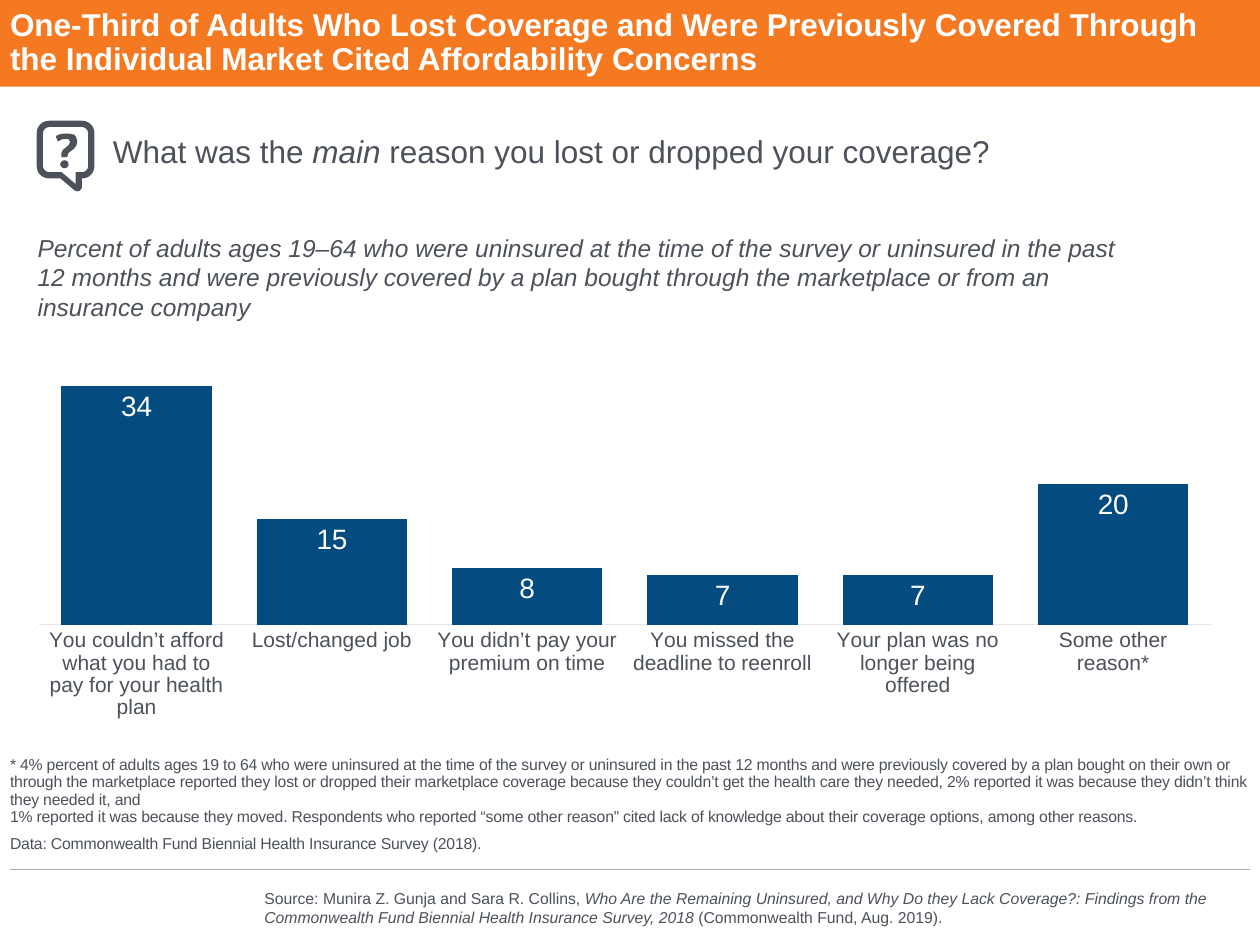
from math import cos, radians, sin

from lxml.etree import SubElement
from pptx import Presentation
from pptx.chart.data import CategoryChartData
from pptx.dml.color import RGBColor
from pptx.enum.chart import XL_CHART_TYPE, XL_LABEL_POSITION, XL_TICK_MARK
from pptx.enum.shapes import MSO_CONNECTOR, MSO_SHAPE
from pptx.enum.text import MSO_ANCHOR
from pptx.oxml.ns import qn
from pptx.util import Pt

ORANGE = RGBColor(0xF4, 0x79, 0x20)
BLUE = RGBColor(0x04, 0x4C, 0x7F)
SLATE = RGBColor(0x4C, 0x51, 0x5A)
RULE = RGBColor(0xAB, 0xAB, 0xAB)
AXIS = RGBColor(0xE3, 0xE5, 0xE7)
WHITE = RGBColor(0xFF, 0xFF, 0xFF)

prs = Presentation()
prs.slide_width, prs.slide_height = Pt(720), Pt(540)
s = prs.slides.add_slide(prs.slide_layouts[6])


def add_text(box, paragraphs, size, color=SLATE, bold=False, inset=True,
             anchor=MSO_ANCHOR.TOP, para_format={}, tracking=None):
    """Each paragraph is a list of (text, italic) runs; None is a line break."""
    tf = s.shapes.add_textbox(*map(Pt, box)).text_frame
    tf.word_wrap, tf.vertical_anchor = True, anchor
    if not inset:
        for side in ("left", "top", "right", "bottom"):
            setattr(tf, f"margin_{side}", 0)
    for i, runs in enumerate(paragraphs):
        p = tf.add_paragraph() if i else tf.paragraphs[0]
        for name, value in para_format.items():
            setattr(p, name, value)
        for run in runs:
            if run is None:
                p.add_line_break()
                continue
            r = p.add_run()
            r.text, italic = run
            fmt = {"name": "Arial", "size": Pt(size), "bold": bold, "italic": italic}
            for name, value in fmt.items():
                setattr(r.font, name, value)
            r.font.color.rgb = color
            if tracking:
                r.font._element.set("spc", str(tracking))


def rounded_outline(left, top, right, bottom, radius, tail):
    """Clockwise points of a rounded box with a tail on its bottom edge."""
    centres = [(left + radius, top + radius, 180), (right - radius, top + radius, 270),
               (right - radius, bottom - radius, 0), (left + radius, bottom - radius, 90)]
    points = []
    for i, (cx, cy, start) in enumerate(centres):
        if i == 3:
            points += tail
        for angle in range(start, start + 91, 15):
            points.append((cx + radius * cos(radians(angle)),
                           cy + radius * sin(radians(angle))))
    return points


# Title bar and footer rule
bar = s.shapes.add_shape(MSO_SHAPE.RECTANGLE, 0, 0, Pt(720), Pt(49.5))
bar.shadow.inherit = False
bar.fill.solid()
bar.fill.fore_color.rgb = ORANGE
bar.line.fill.background()

rule = s.shapes.add_connector(MSO_CONNECTOR.STRAIGHT, Pt(5.75), Pt(497), Pt(714.25), Pt(497))
rule.line.color.rgb = RULE
rule.line.width = Pt(0.75)
SubElement(rule._element.spPr, qn("a:effectLst"))

# Column chart
data = CategoryChartData(number_format="0")
data.categories = ["You couldn’t afford what you had to pay for your health plan",
                   "Lost/changed job", "You didn’t pay your premium on time",
                   "You missed the deadline to reenroll",
                   "Your plan was no longer being offered", "Some other reason*"]
data.add_series("Percent of adults", (34, 15, 8, 7, 7, 20))
chart = s.shapes.add_chart(XL_CHART_TYPE.COLUMN_CLUSTERED, Pt(20.9), Pt(146.9),
                           Pt(684.7), Pt(295.9), data).chart
chart.has_legend = chart.has_title = False

plot = chart.plots[0]
plot.gap_width, plot.vary_by_categories = 30, False
plot.has_data_labels = True
labels = plot.data_labels
label_format = {"show_value": True, "position": XL_LABEL_POSITION.INSIDE_END,
                "number_format": "0", "number_format_is_linked": False}
for name, value in label_format.items():
    setattr(labels, name, value)
fill = plot.series[0].format.fill
fill.solid()
fill.fore_color.rgb = BLUE

cat, val = chart.category_axis, chart.value_axis
cat.major_tick_mark = XL_TICK_MARK.NONE
cat.format.line.color.rgb = AXIS
cat.format.line.width = Pt(0.75)
axis_format = {"minimum_scale": 0, "maximum_scale": 50, "major_unit": 25,
               "has_major_gridlines": False, "visible": False}
for name, value in axis_format.items():
    setattr(val, name, value)

for font, size, color in ((chart.font, 10, SLATE), (cat.tick_labels.font, 12, SLATE),
                          (labels.font, 16, WHITE)):
    font.name, font.size = "Arial", Pt(size)
    font.color.rgb = color

# Fixed inner plot area
area = chart._chartSpace.chart.plotArea
for old in area.findall(qn("c:layout")):
    area.remove(old)
layout = SubElement(area, qn("c:layout"))
area.insert(0, layout)
manual = SubElement(layout, qn("c:manualLayout"))
for tag, value in {"layoutTarget": "inner", "xMode": "edge", "yMode": "edge",
                   "x": 0.002, "y": 0.033, "w": 0.978, "h": 0.677}.items():
    SubElement(manual, qn(f"c:{tag}")).set("val", str(value))

# Title
add_text((5.75, 0, 708.5, 49.5),
         [[("One-Third of Adults Who Lost Coverage and Were Previously Covered Through "
            "the Individual Market Cited Affordability Concerns", False)]],
         18, WHITE, bold=True, inset=False, anchor=MSO_ANCHOR.MIDDLE,
         para_format={"line_spacing": 0.9})

# Survey question and base
add_text((57.4, 72, 655, 29),
         [[("What was the ", False), ("main", True),
           (" reason you lost or dropped your coverage?", False)]], 18)
add_text((14.4, 129.5, 650, 41),
         [[("Percent of adults ages 19–64 who were uninsured at the time of the survey or "
            "uninsured in the past 12 months and were previously covered by a plan bought "
            "through the marketplace or from an insurance company", True)]], 14)

# Footnote and data note
add_text((5.75, 420, 708.5, 67.5),
         [[("* 4% percent of adults ages 19 to 64 who were uninsured at the time of the survey "
            "or uninsured in the past 12 months and were previously covered by a plan bought "
            "on their own or through the marketplace reported they lost or dropped their "
            "marketplace coverage because they couldn’t get the health care they needed, 2% "
            "reported it was because they didn’t think they needed it, and", False), None,
           ("1% reported it was because they moved. Respondents who reported “some other "
            "reason” cited lack of knowledge about their coverage options, among other "
            "reasons.", False)],
          [("Data: Commonwealth Fund Biennial Health Insurance Survey (2018).", False)]],
         9, inset=False, anchor=MSO_ANCHOR.BOTTOM, tracking=-10,
         para_format={"line_spacing": 0.9, "space_after": Pt(6)})

# Source
add_text((144, 504, 567.5, 29),
         [[("Source: Munira Z. Gunja and Sara R. Collins, ", False),
           ("Who Are the Remaining Uninsured, and Why Do they Lack Coverage?: Findings from "
            "the Commonwealth Fund Biennial Health Insurance Survey, 2018", True),
           (" (Commonwealth Fund, Aug. 2019).", False)]], 9, anchor=MSO_ANCHOR.MIDDLE)

# Question icon: speech bubble ring, hook and dot
bubble = [
    rounded_outline(21, 69, 54, 102, 7, [(46.8, 102), (46.8, 107.3), (45.7, 109),
                                         (44, 109.4), (42.5, 108.7), (34.6, 102)]),
    rounded_outline(24.6, 72.6, 50.4, 98.4, 3.6, [(43.2, 98.4), (43.2, 105.2), (35.3, 98.4)]),
]
hook = [(42.5, 77), (40.3, 76.5), (38.2, 76.3), (34.6, 76.6), (31.9, 77.8), (33.1, 80.9),
        (35.3, 79.7), (37.4, 79.4), (39.3, 79.6), (40.2, 81), (39.4, 82.8), (38, 84),
        (36, 85.7), (35.2, 87.2), (35.1, 89.8), (38.5, 89.8), (39, 87.8), (40, 86.8),
        (42.4, 84.9), (43.7, 83.2), (44.2, 80.8), (43.6, 78.4)]
icon = []
for contours in (bubble, [hook]):
    builder = None
    for contour in contours:
        points = [(Pt(x), Pt(y)) for x, y in contour]
        if builder is None:
            builder = s.shapes.build_freeform(*points[0])
        else:
            builder.move_to(*points[0])
        builder.add_line_segments(points[1:], close=True)
    icon.append(builder.convert_to_shape())
icon.append(s.shapes.add_shape(MSO_SHAPE.OVAL, Pt(34.4), Pt(91.6), Pt(4.8), Pt(4.6)))
for sp in icon:
    sp.shadow.inherit = False
    sp.fill.solid()
    sp.fill.fore_color.rgb = SLATE
    sp.line.fill.background()

prs.save("out.pptx")
